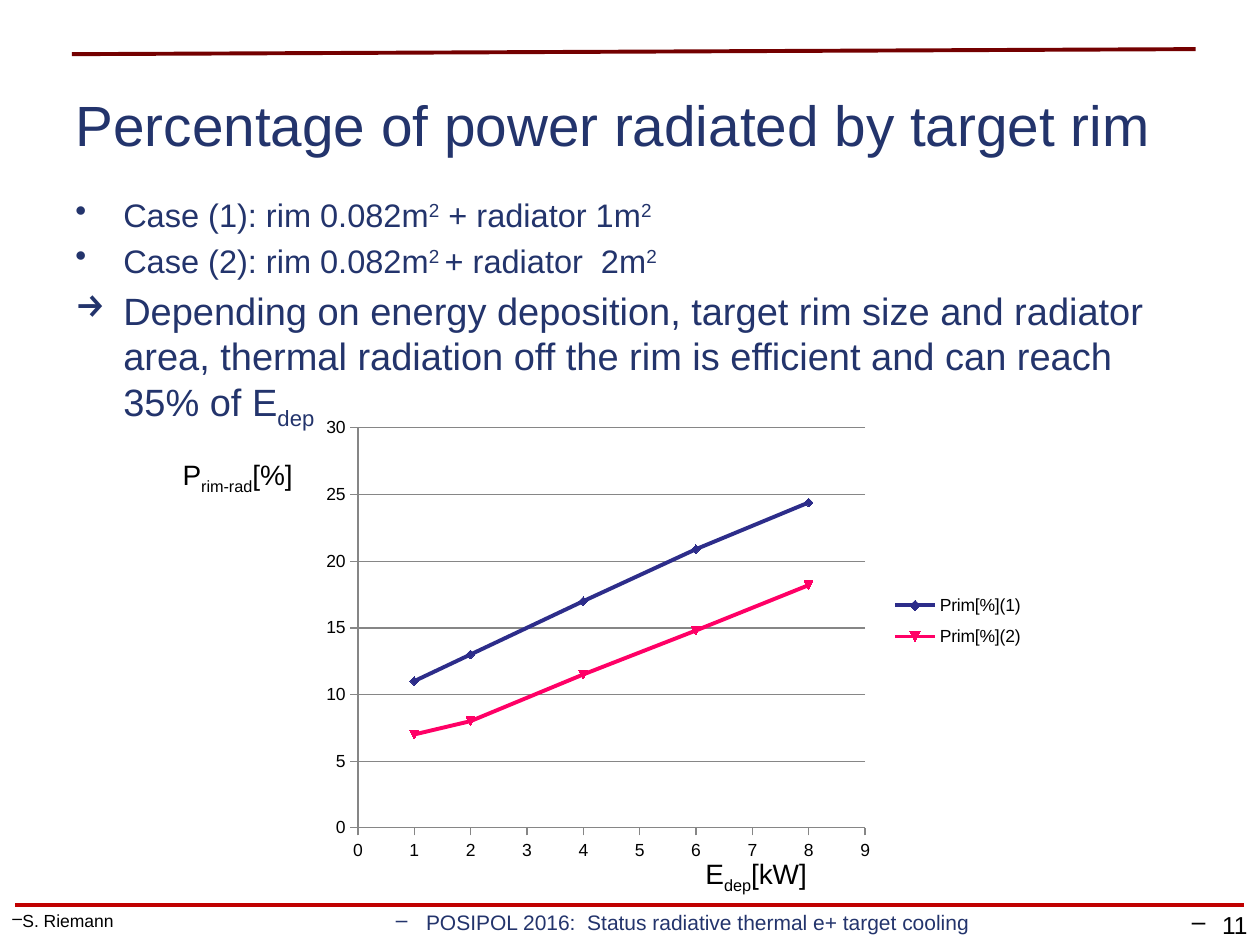
from lxml import etree
from pptx import Presentation
from pptx.chart.data import XyChartData
from pptx.dml.color import RGBColor
from pptx.enum.chart import XL_CHART_TYPE as ChartType
from pptx.enum.chart import XL_LEGEND_POSITION as LegendPosition
from pptx.enum.chart import XL_MARKER_STYLE as MarkerStyle
from pptx.enum.chart import XL_TICK_MARK as TickMark
from pptx.enum.shapes import MSO_CONNECTOR as Connector
from pptx.enum.text import MSO_ANCHOR as Anchor
from pptx.enum.text import PP_ALIGN as Align
from pptx.oxml import parse_xml
from pptx.oxml.ns import nsdecls, qn
from pptx.util import Inches, Pt

NAVY = RGBColor(0x23, 0x34, 0x6C)
BLACK = RGBColor(0, 0, 0)
RED = RGBColor(0xC0, 0, 0)
MAROON = RGBColor(0x74, 0, 0)
GRAY = RGBColor(0x86, 0x86, 0x86)
INDIGO = RGBColor(0x2D, 0x2D, 0x8A)
PINK = RGBColor(0xFF, 0, 0x66)
SUPER, SUB = 30000, -25000


class SlideBuilder:
    font_name = "Arial"

    def __init__(self, slide):
        self.slide = slide

    def style(self, font, size, color):
        font.name = self.font_name
        font.size = Pt(size)
        font.color.rgb = color

    def rule(self, start, end, color):
        line = self.slide.shapes.add_connector(
            Connector.STRAIGHT, *(Inches(v) for v in start + end))
        line.line.color.rgb = color
        line.line.width = Pt(2.25)
        etree.SubElement(line._element.spPr, qn("a:effectLst"))

    def title(self, text, box, size):
        title = self.slide.shapes.title
        title.left, title.top, title.width, title.height = (Inches(v) for v in box)
        title.text_frame.text = text
        title.text_frame.vertical_anchor = Anchor.MIDDLE
        paragraph = title.text_frame.paragraphs[0]
        paragraph.alignment = Align.LEFT
        self.style(paragraph.font, size, NAVY)

    def text_box(self, box, wrap=True):
        frame = self.slide.shapes.add_textbox(*(Inches(v) for v in box)).text_frame
        frame.word_wrap = wrap
        return frame

    def paragraph(self, paragraph, pieces, size, color, align=Align.LEFT,
                  bullet=None, indent=0):
        paragraph.alignment = align
        if bullet:
            properties = paragraph._p.get_or_add_pPr()
            properties.set("marL", str(Inches(indent)))
            properties.set("indent", str(-Inches(indent)))
            etree.SubElement(properties, qn("a:buChar")).set("char", bullet)
        self.style(paragraph.font, size, color)
        for text, baseline in pieces:
            run = paragraph.add_run()
            run.text = text
            if baseline:
                run._r.get_or_add_rPr().set("baseline", str(baseline))

    def bullets(self, box, items):
        frame = self.text_box(box)
        for index, (bullet, size, pieces) in enumerate(items):
            paragraph = frame.add_paragraph() if index else frame.paragraphs[0]
            if index:
                paragraph.space_before = Pt(round(size * 0.2, 1))
            self.paragraph(paragraph, pieces, size, NAVY, bullet=bullet, indent=0.38)

    def footer(self, text, box, size, color, align, indent, right_inset=0.1):
        frame = self.text_box(box)
        frame.margin_right = Inches(right_inset)
        self.paragraph(frame.paragraphs[0], [(text, 0)], size, color, align, "–", indent)

    def axis_label(self, box, pieces):
        frame = self.text_box(box, wrap=False)
        self.paragraph(frame.paragraphs[0], pieces, 16, BLACK)

    def axis(self, axis, maximum, step):
        axis.minimum_scale, axis.maximum_scale, axis.major_unit = 0, maximum, step
        axis.major_tick_mark = TickMark.OUTSIDE
        axis.minor_tick_mark = TickMark.NONE
        axis.format.line.color.rgb = GRAY
        axis.tick_labels.number_format = "General"
        axis.tick_labels.number_format_is_linked = False

    def layout(self, x, y, width, height, inner=False):
        target = '<c:layoutTarget val="inner"/>' if inner else ""
        return parse_xml(
            f'<c:layout {nsdecls("c")}><c:manualLayout>{target}'
            '<c:xMode val="edge"/><c:yMode val="edge"/>'
            f'<c:x val="{x}"/><c:y val="{y}"/><c:w val="{width}"/><c:h val="{height}"/>'
            '</c:manualLayout></c:layout>')

    def scatter(self, box, energies, curves):
        data = XyChartData()
        for name, _, percentages in curves:
            points = data.add_series(name)
            for energy, percentage in zip(energies, percentages):
                points.add_data_point(energy, percentage)
        chart = self.slide.shapes.add_chart(
            ChartType.XY_SCATTER_LINES, *(Inches(v) for v in box), data).chart
        self.style(chart.font, 10, BLACK)
        chart.has_title = False
        self.axis(chart.category_axis, 9, 1)
        self.axis(chart.value_axis, 30, 5)
        chart.category_axis.has_major_gridlines = False
        chart.value_axis.has_major_gridlines = True
        chart.value_axis.major_gridlines.format.line.color.rgb = GRAY

        plot = chart.plots[0]
        plot.vary_by_categories = False
        for series, (_, color, _) in zip(plot.series, curves):
            series.smooth = False
            series.format.line.color.rgb = color
            series.format.line.width = Pt(2.25)
            series.marker.style = MarkerStyle.AUTOMATIC
            series.marker.size = 5
            series.marker.format.fill.solid()
            series.marker.format.fill.fore_color.rgb = color
            series.marker.format.line.color.rgb = color

        chart.has_legend = True
        chart.legend.position = LegendPosition.RIGHT
        chart.legend.include_in_layout = False
        legend = chart.legend._element
        plot_area = chart._chartSpace.chart.plotArea
        for parent in (legend, plot_area):
            for automatic in parent.findall(qn("c:layout")):
                parent.remove(automatic)
        plot_area.insert(0, self.layout(0.06, 0.04, 0.71, 0.87, inner=True))
        legend.find(qn("c:legendPos")).addnext(self.layout(0.8, 0.38, 0.2, 0.16))


def main():
    presentation = Presentation()
    presentation.slide_width, presentation.slide_height = Inches(10), Inches(7.5)
    builder = SlideBuilder(presentation.slides.add_slide(presentation.slide_layouts[5]))

    builder.rule((0.12, 7.18), (9.87, 7.18), RED)
    builder.rule((0.57, 0.43), (9.49, 0.39), MAROON)
    builder.title("Percentage of power radiated by target rim", (0.5, 0.61, 9.08, 0.75), 32.4)
    builder.bullets((0.5, 1.5, 9.08, 1.95), [
        ("•", 18.6, [("Case (1): rim 0.082m", 0), ("2", SUPER),
                     (" + radiator 1m", 0), ("2", SUPER)]),
        ("•", 18.6, [("Case (2): rim 0.082m", 0), ("2 ", SUPER),
                     ("+ radiator  2m", 0), ("2", SUPER)]),
        ("→", 21.7, [("Depending on energy deposition, target rim size and radiator area, "
                      "thermal radiation off the rim is efficient and can reach 35% of E", 0),
                     ("dep", SUB)]),
    ])

    builder.footer("S. Riemann", (0, 7.17, 3.42, 0.5), 10, BLACK, Align.LEFT, 0.08)
    builder.footer("POSIPOL 2016:  Status radiative thermal e+ target cooling",
                   (3, 7.17, 5, 0.5), 12, NAVY, Align.CENTER, 0.24, right_inset=0.26)
    builder.footer("11", (7.92, 7.17, 2.08, 0.5), 14, BLACK, Align.RIGHT, 0.24)

    builder.scatter((2.5, 3.25, 5.67, 3.65), (1, 2, 4, 6, 8), [
        ("Prim[%](1)", INDIGO, (11, 13, 17, 20.9, 24.4)),
        ("Prim[%](2)", PINK, (7, 8, 11.5, 14.8, 18.2)),
    ])
    builder.axis_label((5.5, 6.75, 1.05, 0.37), [("E", 0), ("dep", SUB), ("[kW]", 0)])
    builder.axis_label((1.35, 3.58, 1.15, 0.37), [("P", 0), ("rim-rad", SUB), ("[%]", 0)])

    presentation.save("out.pptx")


if __name__ == "__main__":
    main()
